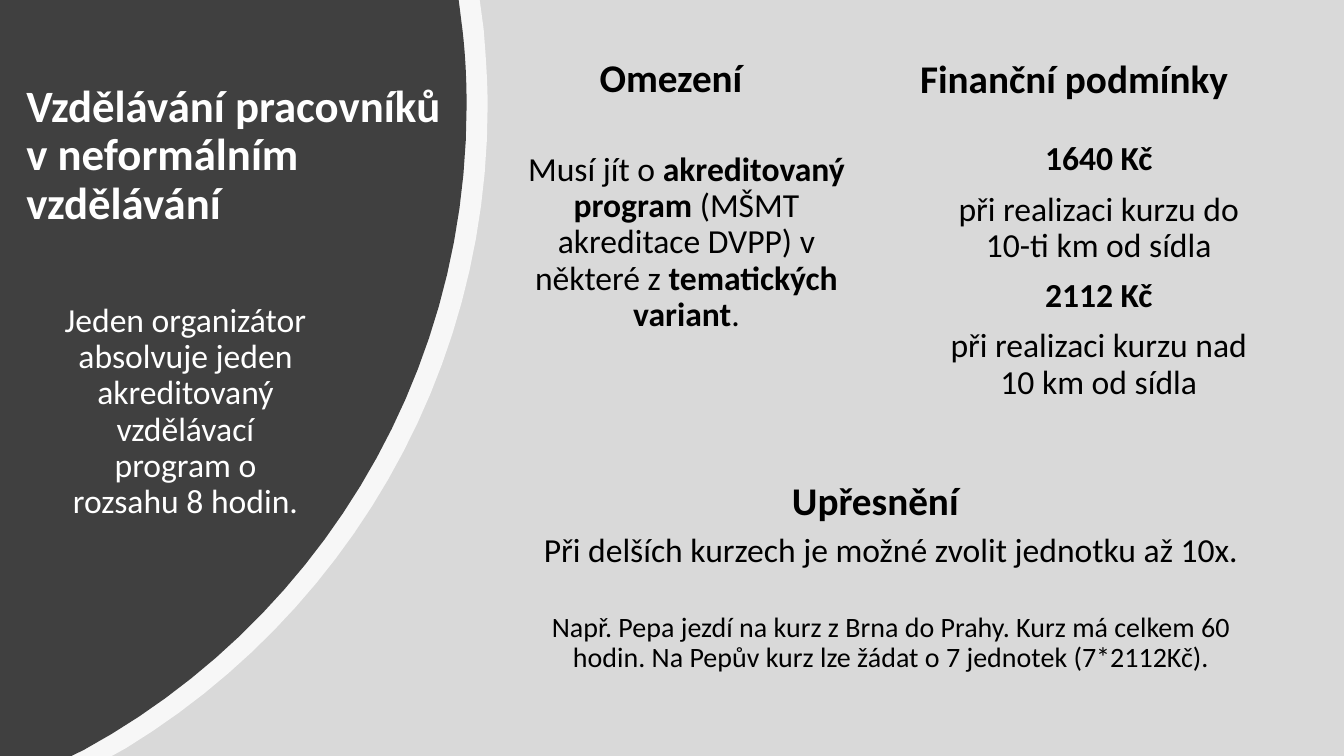
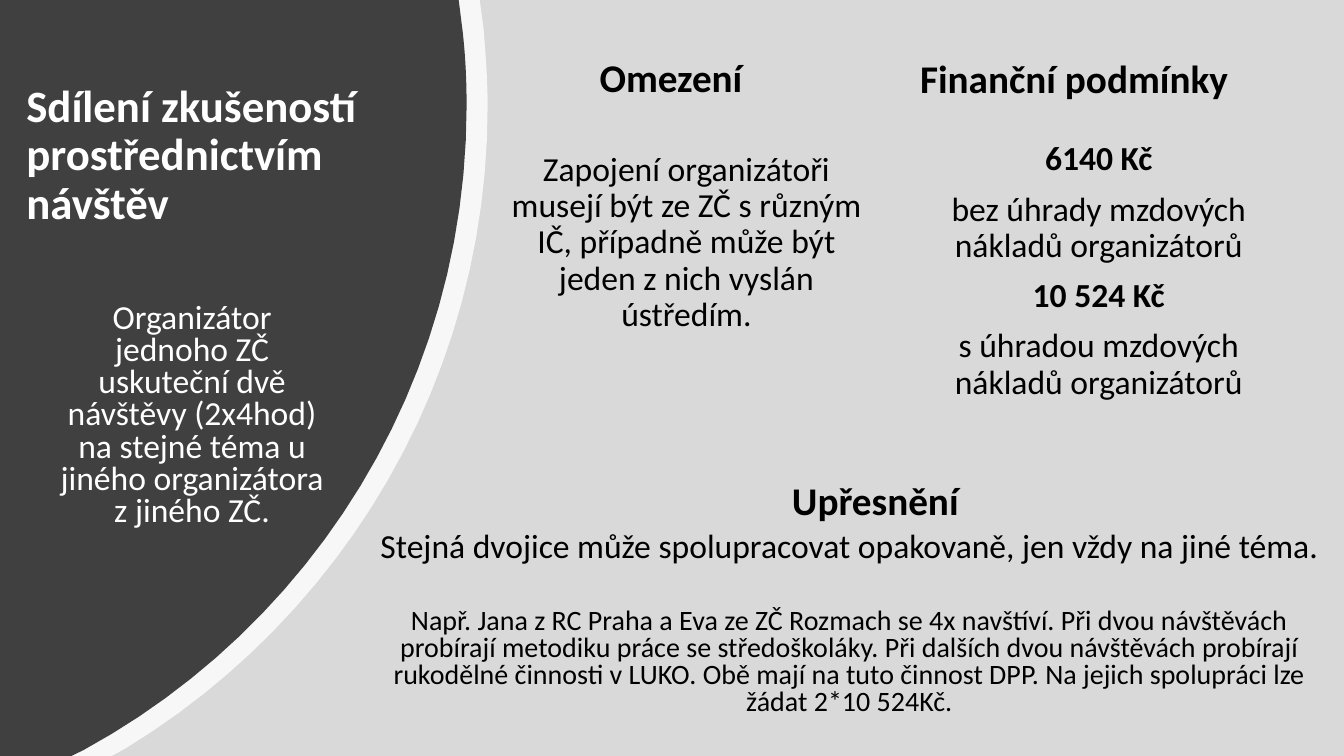
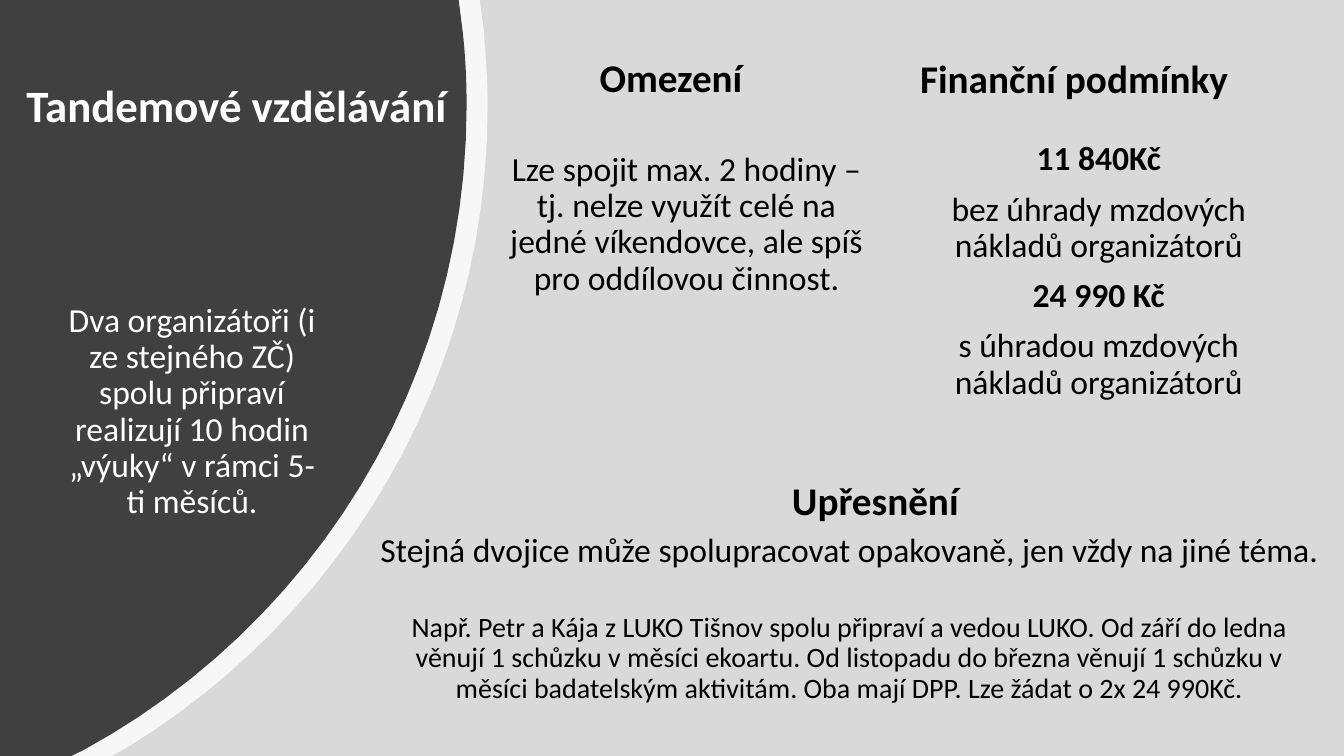
from dataclasses import dataclass, replace

from lxml import etree
from pptx import Presentation
from pptx.dml.color import RGBColor
from pptx.enum.shapes import MSO_SHAPE
from pptx.enum.text import MSO_ANCHOR, MSO_AUTO_SIZE, PP_ALIGN
from pptx.oxml.ns import qn
from pptx.util import Cm, Pt

RECTANGLE = MSO_SHAPE.RECTANGLE
TOP = MSO_ANCHOR.TOP
NO_FIT = MSO_AUTO_SIZE.NONE
GROW = MSO_AUTO_SIZE.SHAPE_TO_FIT_TEXT
LEFT, CENTER = PP_ALIGN.LEFT, PP_ALIGN.CENTER
TITLE_ONLY = 5


@dataclass(frozen=True)
class Theme:
    font: str = "Calibri"
    backdrop: str = "D9D9D9"
    panel: str = "404040"
    light: str = "FFFFFF"
    dark: str = "000000"
    rim_alpha: int = 80
    title: int = 32
    heading: int = 28
    body: int = 24
    example: int = 20
    spacing: float = 0.9
    tight: float = 0.8
    gap: float = 10
    example_gap: float = 31.5


@dataclass(frozen=True)
class Box:
    left: float
    top: float
    width: float
    height: float

    def emu(self):
        return [Cm(v) for v in (self.left, self.top, self.width, self.height)]


@dataclass(frozen=True)
class Section:
    heading: str
    box: Box
    heading_dx: float
    heading_width: float
    body_dy: float


@dataclass(frozen=True)
class Para:
    runs: list
    size: int
    before: float


THEME = Theme()
PAGE = Box(0, 0, 33.87, 19.05)
HEADING_HEIGHT = 1.45
CURVE_STEPS = 24

RIM_EDGE = [
    [(12.09, 0)],
    [(12.19, 0.74), (12.24, 1.37), (12.29, 2.03), (12.29, 2.67)],
    [(12.29, 2.67), (12.29, 9.53), (8.64, 15.52), (3.18, 18.85)],
    [(2.82, 19.05)],
]
PANEL_EDGE = [
    [(11.56, 0)],
    [(11.66, 0.79), (11.73, 1.4), (11.76, 2.03), (11.76, 2.67)],
    [(11.76, 2.67), (11.76, 9.68), (7.85, 15.77), (2.11, 18.9)],
    [(1.8, 19.05)],
]

TITLE_BOX = Box(0.41, 1.98, 10.97, 4.55)
WIDE_TITLE_BOX = replace(TITLE_BOX, width=11.68)
SUMMARY_BOX = Box(1.27, 7.52, 7.14, 6.63)
NARROW_SUMMARY_BOX = replace(SUMMARY_BOX, width=6.81)

LIMITS = Section("Omezení", Box(12.6, 1.22, 9.4, 8.51), 2.26, 4.14, 2.49)
FINANCE = Section("Finanční podmínky", Box(23.7, 1.24, 7.98, 9.63), -0.76, 8.36, 2.21)
DETAILS = Section("Upřesnění", Box(9.32, 11.89, 24.17, 6.42), 10.39, 4.75, 1.42)
NARROW_DETAILS = replace(DETAILS, box=Box(12.88, 11.89, 19.15, 6.42), heading_dx=6.83)

WAGES = ("bez úhrady mzdových nákladů organizátorů", "s úhradou mzdových nákladů organizátorů")
SAME_PAIR = "Stejná dvojice může spolupracovat opakovaně, jen vždy na jiné téma."

TOPICS = [
    dict(
        title="Vzdělávání pracovníků v neformálním vzdělávání",
        summary="Jeden organizátor absolvuje jeden akreditovaný vzdělávací program o rozsahu 8 hodin.",
        summary_box=NARROW_SUMMARY_BOX,
        limits=[
            ("Musí jít o ", False),
            ("akreditovaný program ", True),
            ("(MŠMT akreditace DVPP) v některé z ", False),
            ("tematických variant", True),
            (".", False),
        ],
        prices=("1640 Kč", "2112 Kč"),
        conditions=("při realizaci kurzu do 10-ti km od sídla", "při realizaci kurzu nad 10 km od sídla"),
        details=NARROW_DETAILS,
        rule="Při delších kurzech je možné zvolit jednotku až 10x.",
        example="Např. Pepa jezdí na kurz z Brna do Prahy. Kurz má celkem 60 hodin. "
                "Na Pepův kurz lze žádat o 7 jednotek (7*2112Kč).",
    ),
    dict(
        title="Sdílení zkušeností prostřednictvím návštěv",
        summary="Organizátor jednoho ZČ uskuteční dvě návštěvy (2x4hod) na stejné téma "
                "u jiného organizátora z jiného ZČ.",
        limits=[("Zapojení organizátoři musejí být ze ZČ s různým IČ, "
                 "případně může být jeden z nich vyslán ústředím.", False)],
        prices=("6140 Kč", "10 524 Kč"),
        spacing=THEME.tight,
        rule=SAME_PAIR,
        example="Např. Jana z RC Praha a Eva ze ZČ Rozmach se 4x navštíví. Při dvou návštěvách "
                "probírají metodiku práce se středoškoláky. Při dalších dvou návštěvách probírají "
                "rukodělné činnosti v LUKO. Obě mají na tuto činnost DPP. Na jejich spolupráci lze "
                "žádat 2*10 524Kč.",
    ),
    dict(
        title="Tandemové vzdělávání",
        title_box=WIDE_TITLE_BOX,
        summary="Dva organizátoři (i ze stejného ZČ) spolu připraví realizují 10 hodin „výuky“ "
                "v rámci 5-ti měsíců.",
        limits=[("Lze spojit max. 2 hodiny – tj. nelze využít celé na jedné víkendovce, "
                 "ale spíš pro oddílovou činnost.", False)],
        prices=("11 840Kč", "24 990 Kč"),
        rule=SAME_PAIR,
        example="Např. Petr a Kája z LUKO Tišnov spolu připraví a vedou LUKO. Od září do ledna "
                "věnují 1 schůzku v měsíci ekoartu. Od listopadu do března věnují 1 schůzku v "
                "měsíci badatelským aktivitám. Oba mají DPP. Lze žádat o 2x 24 990Kč.",
    ),
]


def paint(sp, color, alpha=None):
    sp.shadow.inherit = False
    sp.fill.solid()
    sp.fill.fore_color.rgb = RGBColor.from_string(color)
    sp.line.fill.background()
    if alpha is not None:
        clr = sp.element.spPr.find(qn("a:solidFill"))[0]
        etree.SubElement(clr, qn("a:alpha"), val=str(alpha * 1000))


def bezier(a, b, c, d):
    for i in range(CURVE_STEPS + 1):
        t = i / CURVE_STEPS
        u = 1 - t
        weights = (u ** 3, 3 * u * u * t, 3 * u * t * t, t ** 3)
        yield tuple(sum(w * pt[k] for w, pt in zip(weights, (a, b, c, d))) for k in (0, 1))


def draw_curved_panel(slide, box, edge, color, alpha=None):
    points = []
    for part in edge:
        points += part if len(part) == 1 else bezier(*part)
    points.append((0, box.height))
    builder = slide.shapes.build_freeform(Cm(box.left), Cm(box.top))
    builder.add_line_segments([(Cm(box.left + x), Cm(box.top + y)) for x, y in points])
    paint(builder.convert_to_shape(), color, alpha)


def draw_backdrop(slide, box):
    paint(slide.shapes.add_shape(RECTANGLE, *box.emu()), THEME.backdrop)
    draw_curved_panel(slide, box, RIM_EDGE, THEME.light, THEME.rim_alpha)
    draw_curved_panel(slide, box, PANEL_EDGE, THEME.panel)


def write(tf, paras, color, align, spacing):
    for i, para in enumerate(paras):
        p = tf.add_paragraph() if i else tf.paragraphs[0]
        p.alignment = align
        p.line_spacing = spacing
        p.space_before = Pt(para.before)
        for text, bold in para.runs:
            r = p.add_run()
            r.text = text
            r.font.name = THEME.font
            r.font.size = Pt(para.size)
            r.font.bold = bold
            r.font.color.rgb = RGBColor.from_string(color)


def add_text(slide, box, paras, color=THEME.dark, align=CENTER, spacing=THEME.spacing, wrap=True):
    tf = slide.shapes.add_textbox(*box.emu()).text_frame
    tf.word_wrap = wrap
    tf.auto_size = NO_FIT if wrap else GROW
    write(tf, paras, color, align, spacing)


def body(*runs):
    return Para(list(runs), THEME.body, THEME.gap)


def draw_title(slide, box, text):
    sp = slide.shapes.title
    sp.left, sp.top, sp.width, sp.height = box.emu()
    sp.element.getparent().append(sp.element)
    tf = sp.text_frame
    tf.word_wrap = True
    tf.auto_size = NO_FIT
    tf.vertical_anchor = TOP
    write(tf, [Para([(text, True)], THEME.title, 0)], THEME.light, LEFT, THEME.spacing)


def draw_section(slide, section, paras, spacing=THEME.spacing):
    box = section.box
    heading_box = Box(box.left + section.heading_dx, box.top, section.heading_width, HEADING_HEIGHT)
    body_box = replace(box, top=box.top + section.body_dy, height=box.height - section.body_dy)
    heading = Para([(section.heading, True)], THEME.heading, 0)
    add_text(slide, heading_box, [heading], align=LEFT, spacing=1.0, wrap=False)
    add_text(slide, body_box, paras, spacing=spacing)


def build_topic(prs, topic):
    slide = prs.slides.add_slide(prs.slide_layouts[TITLE_ONLY])
    spacing = topic.get("spacing", THEME.spacing)
    draw_backdrop(slide, PAGE)
    draw_title(slide, topic.get("title_box", TITLE_BOX), topic["title"])
    add_text(slide, topic.get("summary_box", SUMMARY_BOX), [body((topic["summary"], False))],
             color=THEME.light, spacing=spacing)
    draw_section(slide, LIMITS, [body(*topic["limits"])])
    finance = []
    for price, condition in zip(topic["prices"], topic.get("conditions", WAGES)):
        finance += [body((price, True)), body((condition, False))]
    draw_section(slide, FINANCE, finance)
    example = Para([(topic["example"], False)], THEME.example, THEME.example_gap)
    draw_section(slide, topic.get("details", DETAILS),
                 [body((topic["rule"], False)), example], spacing)


def main():
    prs = Presentation()
    prs.slide_width, prs.slide_height = Cm(PAGE.width), Cm(PAGE.height)
    for topic in TOPICS:
        build_topic(prs, topic)
    prs.save("out.pptx")


if __name__ == "__main__":
    main()
